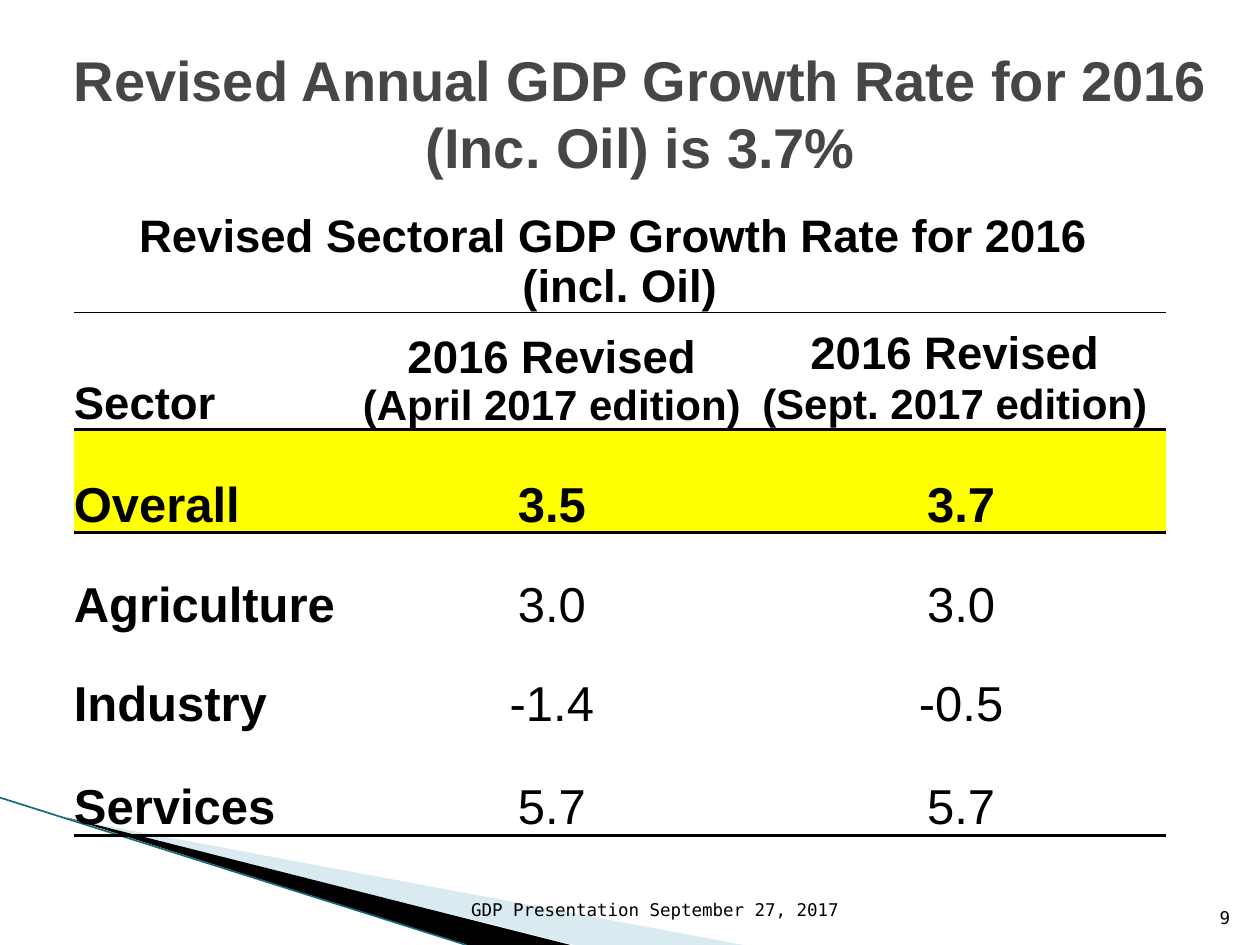
"""Builds the slide on revised 2016 GDP growth by sector."""
from lxml.etree import SubElement
from pptx import Presentation
from pptx.dml.color import RGBColor
from pptx.enum.text import MSO_ANCHOR, MSO_AUTO_SIZE, PP_ALIGN
from pptx.oxml import parse_xml
from pptx.oxml.ns import nsdecls, qn
from pptx.util import Cm, Pt

TITLE = "Revised Annual GDP Growth Rate for 2016\v(Inc. Oil) is 3.7%"
CAPTION = [[("Revised Sectoral GDP Growth Rate for 2016 ", 26)], [("(incl. Oil)", 26)]]
HEADINGS = [
    [[("Sector", 26)]],
    [[("2016 Revised\v", 26), ("(April 2017 edition)", 24)]],
    [[("2016 Revised ", 26)], [("(Sept. 2017 edition)", 24), (" ", 26)]],
]
GROWTH = [
    ("Overall", "3.5", "3.7"),
    ("Agriculture", "3.0", "3.0"),
    ("Industry", "-1.4", "-0.5"),
    ("Services", "5.7", "5.7"),
]
FOOTERS = [
    ("GDP Presentation September 27, 2017", (8.69, 17.65, 8.46, 1.02)),
    ("9", (24.03, 17.81, 1.02, 1.02)),
]
WEDGES = [
    ("A0CBDC", 40, [(1.4, 16.51), (14.99, 19.05), (11.58, 19.05)]),
    ("000000", 100, [(1.35, 16.48), (11.5, 19.05), (9.4, 19.05)]),
]
COLUMN_WIDTHS = [5.51, 8.25, 8.25]
ROW_HEIGHTS = [2.36, 2.36, 2.08, 2.01, 2.01, 2.08]
RULES = {0: 0.5, 1: 2, 5: 2}
HIGHLIGHT_ROW = 2


def color(value):
    return RGBColor.from_string(value)


def apply(target, **values):
    for key, value in values.items():
        setattr(target, key, value)


def write(frame, paragraphs, align, face="Arial", ink="000000", bold=False):
    for index, pieces in enumerate(paragraphs):
        paragraph = frame.add_paragraph() if index else frame.paragraphs[0]
        paragraph.alignment = align
        for text, size in pieces:
            for part, line in enumerate(text.split("\v")):
                if part:
                    paragraph.add_line_break()
                if line:
                    run = paragraph.add_run()
                    run.text = line
                    apply(run.font, name=face, size=Pt(size), bold=bold)
                    run.font.color.rgb = color(ink)


def add_wedge(slide, fill, opacity, corners):
    points = [(Cm(x), Cm(y)) for x, y in corners]
    builder = slide.shapes.build_freeform(*points[0])
    builder.add_line_segments(points[1:], close=True)
    wedge = builder.convert_to_shape()
    wedge.shadow.inherit = False
    wedge.fill.solid()
    wedge.fill.fore_color.rgb = color(fill)
    wedge.line.fill.background()
    if opacity < 100:
        tint = next(wedge._element.spPr.iter(qn("a:srgbClr")))
        SubElement(tint, qn("a:alpha")).set("val", str(opacity * 1000))


def add_edge(cell, side, width):
    cell._tc.get_or_add_tcPr().insert(0, parse_xml(
        f'<a:{side} {nsdecls("a")} w="{Pt(width)}"><a:solidFill>'
        f'<a:srgbClr val="000000"/></a:solidFill></a:{side}>'))


def add_growth_table(slide):
    rows = [[CAPTION, None, None], HEADINGS]
    rows += [[[[(text, 28)]] for text in record] for record in GROWTH]
    table = slide.shapes.add_table(
        len(rows), len(COLUMN_WIDTHS), Cm(1.49), Cm(3.94),
        Cm(sum(COLUMN_WIDTHS)), Cm(sum(ROW_HEIGHTS))).table
    apply(table, first_row=False, horz_banding=False)
    table._tbl.tblPr[0].text = "{2D5ABB26-0587-4C30-8999-92F81FD0307C}"
    for column, width in zip(table.columns, COLUMN_WIDTHS):
        column.width = Cm(width)
    for row, height in zip(table.rows, ROW_HEIGHTS):
        row.height = Cm(height)
    table.cell(0, 0).merge(table.cell(0, 2))
    for r, contents in enumerate(rows):
        for c, content in enumerate(contents):
            cell = table.cell(r, c)
            apply(cell, vertical_anchor=MSO_ANCHOR.BOTTOM, margin_left=0,
                  margin_right=0, margin_top=0, margin_bottom=0)
            if r == HIGHLIGHT_ROW:
                cell.fill.solid()
                cell.fill.fore_color.rgb = color("FFFF00")
            else:
                cell.fill.background()
            for side, ruled_row in (("lnB", r), ("lnT", r - 1)):
                if ruled_row in RULES:
                    add_edge(cell, side, RULES[ruled_row])
            if content:
                align = PP_ALIGN.LEFT if r and c == 0 else PP_ALIGN.CENTER
                write(cell.text_frame, content, align,
                      bold=r <= HIGHLIGHT_ROW or c == 0)


def main():
    deck = Presentation()
    apply(deck, slide_width=Cm(25.4), slide_height=Cm(19.05))
    slide = deck.slides.add_slide(deck.slide_layouts[5])

    for wedge in WEDGES:
        add_wedge(slide, *wedge)
    edge = slide.shapes.add_connector(1, Cm(0), Cm(16.08), Cm(9.4), Cm(19.05))
    edge.line.width = Pt(0.95)
    edge.line.color.rgb = color("16697A")
    SubElement(edge._element.spPr, qn("a:effectLst"))

    title = slide.shapes.title
    apply(title, left=Cm(0.43), top=Cm(0.64), width=Cm(24.97), height=Cm(3.25))
    apply(title.text_frame, word_wrap=True, auto_size=MSO_AUTO_SIZE.NONE,
          vertical_anchor=MSO_ANCHOR.MIDDLE)
    write(title.text_frame, [[(TITLE, 32)]], PP_ALIGN.CENTER, ink="464646", bold=True)

    for text, place in FOOTERS:
        frame = slide.shapes.add_textbox(*map(Cm, place)).text_frame
        apply(frame, word_wrap=True, vertical_anchor=MSO_ANCHOR.BOTTOM)
        write(frame, [[(text, 10)]], PP_ALIGN.RIGHT, face="DejaVu Sans Mono")

    add_growth_table(slide)
    deck.save("out.pptx")


if __name__ == "__main__":
    main()
